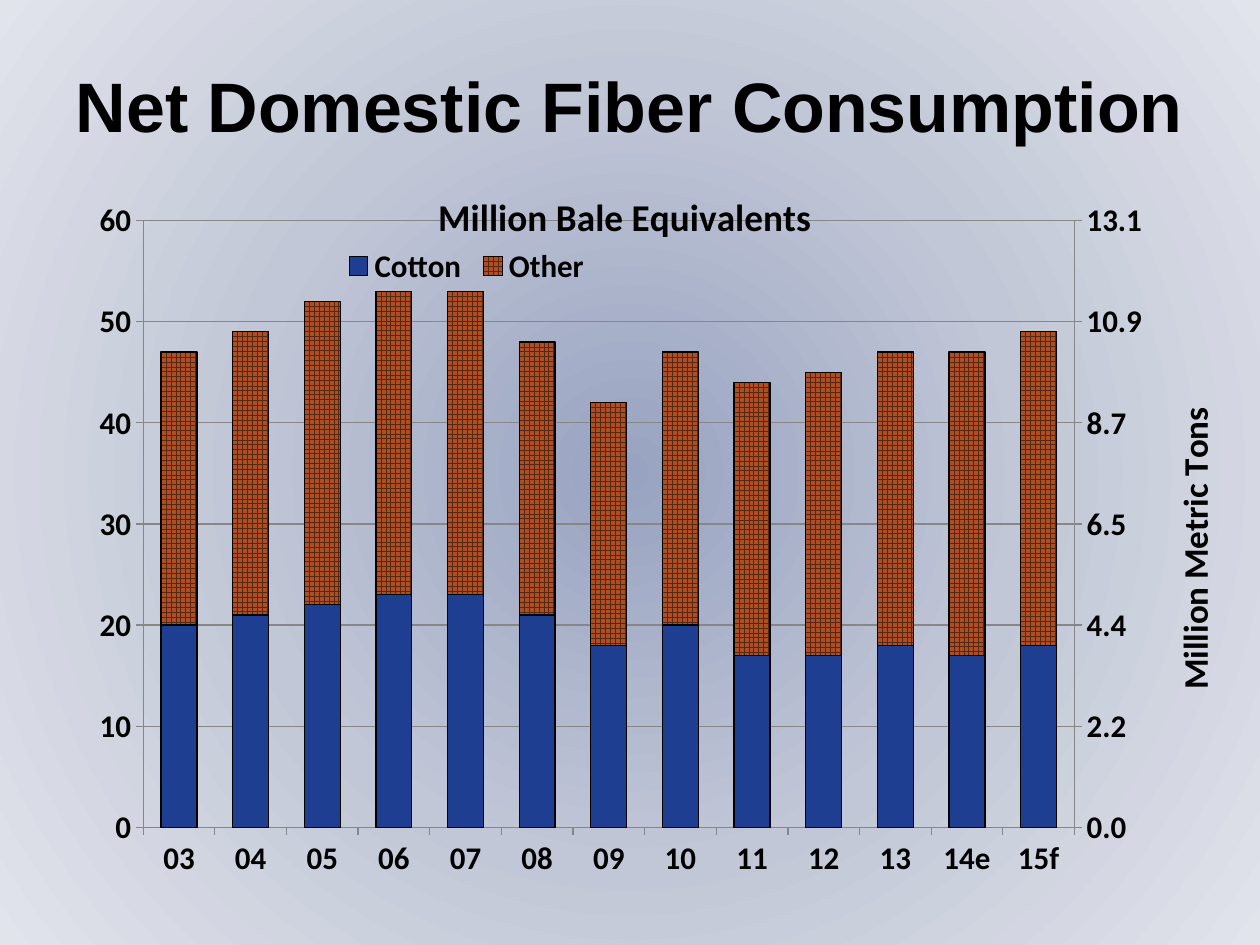
"""Build the net domestic fiber consumption slide with a two-axis stacked column chart."""
from copy import deepcopy
from dataclasses import dataclass

from pptx import Presentation, oxml, util as u
from pptx.chart import axis as chart_axis, data as chart_data
from pptx.dml import color
from pptx.enum import chart as chart_enum, dml, text
from pptx.oxml import ns

TITLE = "Net Domestic Fiber Consumption"
CHART_TITLE = "Million Bale Equivalents"
YEARS = ["03", "04", "05", "06", "07", "08", "09", "10", "11", "12", "13", "14e", "15f"]
BALES = {
    "Cotton": [20, 21, 22, 23, 23, 21, 18, 20, 17, 17, 18, 17, 18],
    "Other": [27, 28, 30, 30, 30, 27, 24, 27, 27, 28, 29, 30, 31],
}
TONS = {
    "Series 3": [4.5, 4.5, 4.9, 4.9, 4.9, 4.6, 4, 4.4, 3.8, 3.7, 3.8, 3.7, 3.9],
    "Series 4": [6, 6.2, 6.5, 6.5, 6.5, 5.8, 5.3, 6, 5.8, 6, 6.3, 6.6, 6.8],
}
BALES_PER_TON = 4.59
BALE_AXIS = {"title": "Million Bales", "max": 60, "step": 10, "format": "0", "at": (0.015, 0.395)}
TON_AXIS = {"title": "Million Metric Tons", "max": 60 / BALES_PER_TON, "step": 10 / BALES_PER_TON,
            "format": "#,##0.0", "at": (0.963, 0.33)}
TITLE_BOX = (0.25, 0.33, 9.49, 1)
CHART_BOX = (0.25, 1.17, 9.49, 5.99)
PLOT_AT = (0.095, 0.097, 0.792, 0.804)
LEGEND_AT = (0.26, 0.13, 0.22, 0.055)
CHART_TITLE_AT = (0.34, 0.047)


@dataclass(frozen=True)
class Theme:
    """Colours, fonts and type sizes."""
    ink: str = "000000"
    grid: str = "868686"
    cotton: str = "1E3E92"
    other_lines: str = "572711"
    other_ground: str = "AE4E22"
    background: tuple = ((0, "98A3C1"), (50, "C2C7D7"), (100, "E1E4EB"))
    title_font: str = "Arial"
    chart_font: str = "Calibri"
    title_size: float = 40
    chart_title_size: float = 21.6
    axis_title_size: float = 20
    label_size: float = 18


THEME = Theme()


def rgb(value):
    """Return a colour from its hex string."""
    return color.RGBColor.from_string(value)


def style_font(font, name, size):
    """Apply the bold black type style."""
    font.name, font.size, font.bold = name, u.Pt(size), True
    font.color.rgb = rgb(THEME.ink)


def child(element, tag):
    """Find a direct child by its prefixed tag."""
    return element.find(ns.qn(tag))


def place(element, index, at, inner=False):
    """Give a chart part a manual layout in fractions of the chart."""
    old = child(element, "c:layout")
    if old is not None:
        element.remove(old)
    target = '<c:layoutTarget val="inner"/>' if inner else ""
    keys = ("x", "y", "w", "h")[:len(at)]
    modes = "".join(f'<c:{key}Mode val="edge"/>' for key in keys[:2])
    values = "".join(f'<c:{key} val="{value}"/>' for key, value in zip(keys, at))
    element.insert(index, oxml.parse_xml(
        f'<c:layout {ns.nsdecls("c")}><c:manualLayout>{target}{modes}{values}'
        "</c:manualLayout></c:layout>"))


def write_title(chart_title, wording, size, at):
    """Write, style and place a chart or axis title."""
    frame = chart_title.text_frame
    frame.text = wording
    style_font(frame.paragraphs[0].runs[0].font, THEME.chart_font, size)
    place(chart_title._element, 1, at)


def style_line(line):
    """Draw an axis or grid line."""
    line.color.rgb = rgb(THEME.grid)
    line.width = u.Pt(0.75)


def style_value_axis(axis, settings):
    """Set the scale, number format and turned title of a value axis."""
    axis.minimum_scale, axis.maximum_scale = 0, settings["max"]
    axis.major_unit = settings["step"]
    axis.major_tick_mark = chart_enum.XL_TICK_MARK.OUTSIDE
    axis.minor_tick_mark = chart_enum.XL_TICK_MARK.NONE
    axis.tick_labels.number_format = settings["format"]
    axis.tick_labels.number_format_is_linked = False
    style_line(axis.format.line)
    write_title(axis.axis_title, settings["title"], THEME.axis_title_size, settings["at"])
    body = axis.axis_title._element.find(".//" + ns.qn("a:bodyPr"))
    body.set("rot", "-5400000")
    body.set("vert", "horz")


def add_ton_axis(chart):
    """Move the ton series to a second plot and return its value axis."""
    plot_area = chart.plots[0]._element.getparent()
    bale_plot = child(plot_area, "c:barChart")
    ton_plot = deepcopy(bale_plot)
    for plot, unwanted in ((bale_plot, slice(len(BALES), None)), (ton_plot, slice(len(BALES)))):
        for series in plot.findall(ns.qn("c:ser"))[unwanted]:
            plot.remove(series)
    bale_plot.addnext(ton_plot)
    category, value = (deepcopy(child(plot_area, tag)) for tag in ("c:catAx", "c:valAx"))
    child(plot_area, "c:valAx").addnext(value)
    value.addnext(category)
    ids = {"category": "5001", "value": "5002"}
    for element, own, other in ((category, "category", "value"), (value, "value", "category")):
        child(element, "c:axId").set("val", ids[own])
        child(element, "c:crossAx").set("val", ids[other])
    for element, axis_id in zip(ton_plot.findall(ns.qn("c:axId")), ids.values()):
        element.set("val", axis_id)
    child(value, "c:axPos").set("val", "r")
    child(value, "c:crosses").set("val", "max")
    chart_axis.CategoryAxis(category).visible = False
    return chart_axis.ValueAxis(value)


def style_series(chart):
    """Fill the bale columns and hide the ton columns."""
    for plot in chart.plots:
        plot.gap_width, plot.overlap, plot.vary_by_categories = 100, 100, False
    cotton, other = chart.plots[0].series
    cotton.format.fill.solid()
    cotton.format.fill.fore_color.rgb = rgb(THEME.cotton)
    pattern = other.format.fill
    pattern.patterned()
    pattern.pattern = dml.MSO_PATTERN.LARGE_GRID
    pattern.fore_color.rgb = rgb(THEME.other_lines)
    pattern.back_color.rgb = rgb(THEME.other_ground)
    for series in (cotton, other):
        series.format.line.color.rgb = rgb(THEME.ink)
        series.format.line.width = u.Pt(0.75)
    for series in chart.plots[1].series:
        series.format.fill.background()
        series.format.line.fill.background()


def add_legend(chart):
    """Show only the bale series in a legend over the plot."""
    chart.has_legend = True
    legend = chart.legend
    legend.position = chart_enum.XL_LEGEND_POSITION.TOP
    legend.include_in_layout = True
    style_font(legend.font, THEME.chart_font, THEME.label_size)
    for offset in range(len(TONS)):
        legend._element.insert(1 + offset, oxml.parse_xml(
            f'<c:legendEntry {ns.nsdecls("c")}><c:idx val="{len(BALES) + offset}"/>'
            '<c:delete val="1"/></c:legendEntry>'))
    place(legend._element, 1 + len(TONS), LEGEND_AT)


def add_consumption_chart(slide):
    """Add the stacked columns with bale and ton axes."""
    data = chart_data.CategoryChartData()
    data.categories = YEARS
    for name, values in {**BALES, **TONS}.items():
        data.add_series(name, values)
    chart = slide.shapes.add_chart(
        chart_enum.XL_CHART_TYPE.COLUMN_STACKED, *map(u.Inches, CHART_BOX), data).chart
    style_font(chart.font, THEME.chart_font, THEME.label_size)
    chart.has_title = True
    write_title(chart.chart_title, CHART_TITLE, THEME.chart_title_size, CHART_TITLE_AT)
    ton_axis = add_ton_axis(chart)
    style_value_axis(chart.value_axis, BALE_AXIS)
    style_value_axis(ton_axis, TON_AXIS)
    ton_axis.has_major_gridlines = False
    style_line(chart.value_axis.major_gridlines.format.line)
    years = chart.category_axis
    years.tick_label_position = chart_enum.XL_TICK_LABEL_POSITION.LOW
    years.major_tick_mark = chart_enum.XL_TICK_MARK.OUTSIDE
    style_line(years.format.line)
    style_series(chart)
    add_legend(chart)
    place(chart.plots[0]._element.getparent(), 0, PLOT_AT, inner=True)


def paint_background(slide):
    """Fill the background with a gradient spreading from the centre."""
    fill = slide.background.fill
    fill.gradient()
    gradient = slide._element.find(".//" + ns.qn("a:gradFill"))
    stops = "".join(f'<a:gs pos="{at * 1000}"><a:srgbClr val="{value}"/></a:gs>'
                    for at, value in THEME.background)
    gradient.getparent().replace(gradient, oxml.parse_xml(
        f'<a:gradFill {ns.nsdecls("a")} rotWithShape="1"><a:gsLst>{stops}</a:gsLst><a:path path="circle">'
        '<a:fillToRect l="50000" t="50000" r="50000" b="50000"/></a:path></a:gradFill>'))


def main():
    """Build and save the presentation."""
    presentation = Presentation()
    presentation.slide_width, presentation.slide_height = u.Inches(10), u.Inches(7.5)
    slide = presentation.slides.add_slide(presentation.slide_layouts[5])
    paint_background(slide)
    title = slide.shapes.title
    title.left, title.top, title.width, title.height = map(u.Inches, TITLE_BOX)
    title.text_frame.text = TITLE
    title.text_frame.vertical_anchor = text.MSO_ANCHOR.MIDDLE
    paragraph = title.text_frame.paragraphs[0]
    paragraph.alignment = text.PP_ALIGN.CENTER
    style_font(paragraph.runs[0].font, THEME.title_font, THEME.title_size)
    add_consumption_chart(slide)
    presentation.save("out.pptx")


if __name__ == "__main__":
    main()
